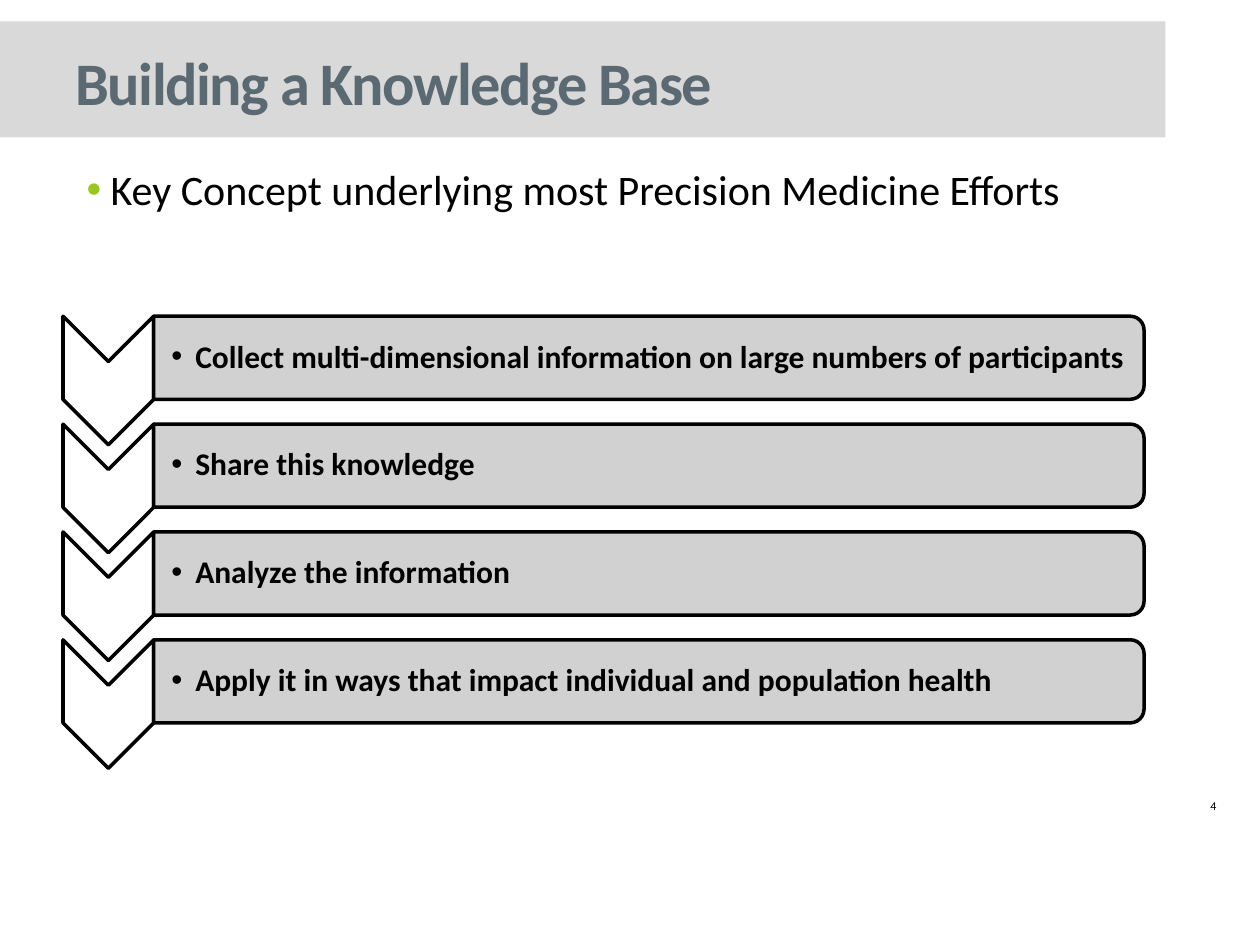
from dataclasses import dataclass
from typing import Optional

from lxml.etree import SubElement
from pptx import Presentation
from pptx.dml.color import RGBColor
from pptx.enum.shapes import MSO_SHAPE
from pptx.enum.text import MSO_ANCHOR, PP_ALIGN
from pptx.oxml.ns import qn
from pptx.util import Inches, Pt

COLORS = {
    "paper": "FFFFFF", "ink": "000000", "band": "D9D9D9",
    "title": "5B6973", "bullet": "98C723", "bar": "CCCCCC",
}
FONT = "Calibri"
CELL = 0.1  # inches: the page is a grid of 100 columns and 75 rows
COLUMNS, ROWS = 100, 75

STEPS = [
    "Collect multi-dimensional information on large numbers of participants",
    "Share this knowledge",
    "Analyze the information",
    "Apply it in ways that impact individual and population health",
]
STEP_TOP, STEP_PITCH = 25.1, 8.56
CHEVRON_LEFT, CHEVRON_WIDTH, CHEVRON_HEIGHT = 5, 7.2, 10.2
BAR_LEFT, BAR_WIDTH, BAR_HEIGHT = 12.2, 78.6, 6.6


@dataclass
class Area:
    """A rectangle in grid columns and rows."""
    left: float
    top: float
    width: float
    height: float

    def lengths(self) -> list:
        return [cells(n) for n in (self.left, self.top, self.width, self.height)]

    def before_quarter_turn(self) -> "Area":
        """The area that covers this one after turning by 90 degrees."""
        shift = (self.width - self.height) / 2
        return Area(self.left + shift, self.top - shift, self.height, self.width)


@dataclass
class Style:
    size: float
    color: str = "ink"
    bold: bool = False
    anchor: MSO_ANCHOR = MSO_ANCHOR.MIDDLE
    align: PP_ALIGN = PP_ALIGN.LEFT
    insets: tuple = (1, 0.5, 1, 0.5)
    spacing: float = 0  # between letters, in points
    bullet: Optional[str] = None
    margin: float = 0
    indent: float = 0
    line_spacing: float = 1
    before: float = 0
    after: float = 0


TITLE = Style(34.5, "title", bold=True, spacing=-0.8)
BODY = Style(24, anchor=MSO_ANCHOR.TOP, bullet="bullet", margin=2.8, indent=-1.9,
             before=4.8)
STEP = Style(18, bold=True, insets=(1.4, 0.1, 0.1, 0.1), bullet="ink", margin=1.9,
             indent=-1.9, line_spacing=0.9, after=2.7)
NUMBER = Style(6.8, align=PP_ALIGN.CENTER, insets=(0, 0, 0, 0))


def cells(count: float) -> int:
    return Inches(count * CELL)


def rgb(name: str) -> RGBColor:
    return RGBColor.from_string(COLORS[name])


def write(box, text: str, style: Style) -> None:
    frame = box.text_frame
    frame.word_wrap = True
    frame.vertical_anchor = style.anchor
    (frame.margin_left, frame.margin_top,
     frame.margin_right, frame.margin_bottom) = map(cells, style.insets)
    para = frame.paragraphs[0]
    para.alignment = style.align
    para.line_spacing = style.line_spacing
    para.space_before, para.space_after = Pt(style.before), Pt(style.after)
    if style.bullet:
        props = para._p.get_or_add_pPr()
        props.set("marL", str(cells(style.margin)))
        props.set("indent", str(cells(style.indent)))
        color = SubElement(props, qn("a:buClr"))
        SubElement(color, qn("a:srgbClr"), val=COLORS[style.bullet])
        SubElement(props, qn("a:buFont"), typeface="Arial")
        SubElement(props, qn("a:buChar"), char="•")
    span = para.add_run()
    span.text = text
    para.font.name, para.font.size = FONT, Pt(style.size)
    para.font.bold, para.font.color.rgb = style.bold, rgb(style.color)
    if style.spacing:
        span._r.get_or_add_rPr().set("spc", str(round(style.spacing * 100)))


def add_text(page, area: Area, text: str, style: Style) -> None:
    write(page.shapes.add_textbox(*area.lengths()), text, style)


def add_block(page, kind: MSO_SHAPE, area: Area, fill: Optional[str] = None,
              line: Optional[str] = None, weight: float = 2, turned: bool = False):
    place = area.before_quarter_turn() if turned else area
    block = page.shapes.add_shape(kind, *place.lengths())
    block.rotation = 90 if turned else 0
    block.shadow.inherit = False
    if fill:
        block.fill.solid()
        block.fill.fore_color.rgb = rgb(fill)
    else:
        block.fill.background()
    if line:
        block.line.color.rgb = rgb(line)
        block.line.width = Pt(weight)
    else:
        block.line.fill.background()
    return block


def add_step(page, index: int, text: str) -> None:
    top = STEP_TOP + index * STEP_PITCH
    add_block(page, MSO_SHAPE.CHEVRON,
              Area(CHEVRON_LEFT, top, CHEVRON_WIDTH, CHEVRON_HEIGHT),
              "paper", "ink", turned=True)
    bar = add_block(page, MSO_SHAPE.ROUND_2_SAME_RECTANGLE,
                    Area(BAR_LEFT, top, BAR_WIDTH, BAR_HEIGHT),
                    "bar", "ink", turned=True)
    color = bar._element.spPr.find(qn("a:solidFill"))[0]
    SubElement(color, qn("a:alpha"), val="90000")
    add_text(page, Area(BAR_LEFT, top + 0.3, BAR_WIDTH - 0.3, BAR_HEIGHT - 0.6),
             text, STEP)


def main() -> None:
    deck = Presentation()
    deck.slide_width, deck.slide_height = cells(COLUMNS), cells(ROWS)
    page = deck.slides.add_slide(deck.slide_layouts[6])

    # Heading on its band
    add_block(page, MSO_SHAPE.RECTANGLE, Area(0, 1.7, 92.5, 9.2), "band")
    add_text(page, Area(5, 1.7, 83.3, 9.5), "Building a Knowledge Base", TITLE)

    # Key statement
    add_text(page, Area(5, 12.5, 83.3, 55),
             "Key Concept underlying most Precision Medicine Efforts", BODY)

    # Page number
    number = add_block(page, MSO_SHAPE.DOUBLE_BRACKET, Area(93.3, 61.8, 6, 4.3),
                       line="paper", weight=1.5)
    number.adjustments[0] = 0.18
    write(number, "4", NUMBER)

    # Chain of steps
    for index, text in enumerate(STEPS):
        add_step(page, index, text)

    deck.save("out.pptx")


if __name__ == "__main__":
    main()
